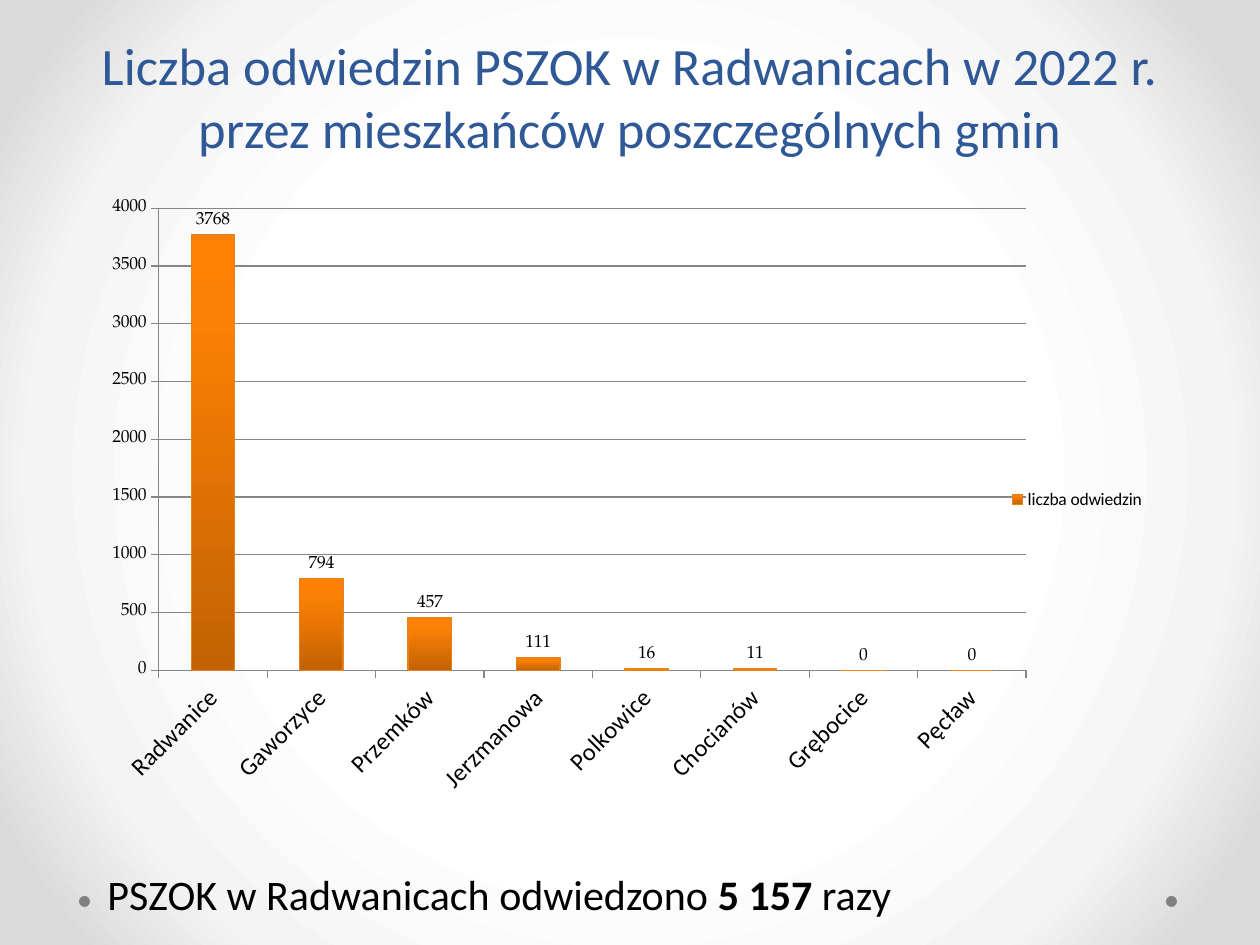
from pptx import Presentation
from pptx.chart.data import CategoryChartData
from pptx.dml.color import RGBColor
from pptx.enum.chart import (XL_CHART_TYPE, XL_LABEL_POSITION,
                             XL_LEGEND_POSITION, XL_TICK_MARK)
from pptx.enum.shapes import MSO_SHAPE
from pptx.enum.text import MSO_ANCHOR, MSO_AUTO_SIZE, PP_ALIGN
from pptx.oxml import parse_xml
from pptx.oxml.ns import nsdecls
from pptx.util import Emu, Pt

SCALE = 914400 / 126
COLORS = {
    "title": "2F5897", "text": "000000", "dot": "808080", "grid": "868686",
    "edge": "E6811C", "low": "C26203", "mid": "FB8004", "top": "FF8002",
    "white": "FFFFFF", "pale": "F4F4F4", "gray": "DADADA",
}
SANS, SERIF = "Calibri", "TeX Gyre Pagella"
VISITS = {
    "Radwanice": 3768, "Gaworzyce": 794, "Przemków": 457, "Jerzmanowa": 111,
    "Polkowice": 16, "Chocianów": 11, "Grębocice": 0, "Pęcław": 0,
}


def px(num):
    return Emu(round(num * SCALE))


def rgb(name):
    return RGBColor.from_string(COLORS[name])


def style(font, face, size, color="text", bold=False):
    font.name, font.size, font.bold = face, Pt(size), bold
    font.color.rgb = rgb(color)


def add_text(slide, box, lines, size, color="text", align=PP_ALIGN.LEFT,
             anchor=MSO_ANCHOR.TOP, fit=MSO_AUTO_SIZE.NONE):
    """Each line is a list of (text, bold) runs."""
    frame = slide.shapes.add_textbox(*map(px, box)).text_frame
    frame.word_wrap, frame.auto_size = True, fit
    frame.vertical_anchor = anchor
    para = frame.paragraphs[0]
    para.alignment = align
    for row, runs in enumerate(lines):
        if row:
            para.add_line_break()
        for text, bold in runs:
            run = para.add_run()
            run.text = text
            style(run.font, SANS, size, color, bold)


def set_grad(fill, root, stops, shade):
    """Fill with a gradient of (percent, color) stops and a shade tag."""
    fill.gradient()
    old = root.xpath(".//a:gradFill")[0]
    marks = "".join(
        f'<a:gs pos="{pos * 1000}"><a:srgbClr val="{COLORS[name]}"/></a:gs>'
        for pos, name in stops)
    new = parse_xml(f'<a:gradFill {nsdecls("a")} rotWithShape="1">'
                    f'<a:gsLst>{marks}</a:gsLst>{shade}</a:gradFill>')
    old.getparent().replace(old, new)


def add_dot(slide, left, top, size):
    dot = slide.shapes.add_shape(
        MSO_SHAPE.OVAL, px(left), px(top), px(size), px(size))
    dot.shadow.inherit = False
    dot.fill.solid()
    dot.fill.fore_color.rgb = rgb("dot")
    dot.line.fill.background()


def set_plot(chart, left, top, width, height):
    """Place the inner plot area, in fractions of the chart."""
    area = chart.element.xpath(".//c:plotArea")[0]
    for old in area.xpath("./c:layout"):
        area.remove(old)
    sizes = "".join(f'<c:{key} val="{val}"/>' for key, val in
                    zip("xywh", (left, top, width, height)))
    area.insert(0, parse_xml(
        f'<c:layout {nsdecls("c")}><c:manualLayout>'
        '<c:layoutTarget val="inner"/><c:xMode val="edge"/>'
        f'<c:yMode val="edge"/>{sizes}</c:manualLayout></c:layout>'))


def set_line(line, color):
    line.color.rgb = rgb(color)
    line.width = Pt(0.75)


def add_chart(slide, box):
    data = CategoryChartData()
    data.categories = list(VISITS)
    data.add_series("liczba odwiedzin", list(VISITS.values()))
    chart = slide.shapes.add_chart(
        XL_CHART_TYPE.COLUMN_CLUSTERED, *map(px, box), data).chart
    style(chart.font, SERIF, 10)
    chart.has_title = False
    set_plot(chart, 0.06, 0.037, 0.816, 0.735)

    # Legend
    chart.has_legend = True
    chart.legend.position = XL_LEGEND_POSITION.RIGHT
    chart.legend.include_in_layout = False
    style(chart.legend.font, SANS, 10)

    # Axes
    cats, vals = chart.category_axis, chart.value_axis
    for axis, face, size in ((cats, SANS, 14), (vals, SERIF, 10)):
        axis.major_tick_mark = XL_TICK_MARK.OUTSIDE
        axis.minor_tick_mark = XL_TICK_MARK.NONE
        set_line(axis.format.line, "grid")
        style(axis.tick_labels.font, face, size)
    chart.element.xpath(".//c:catAx/c:txPr/a:bodyPr")[0].set("rot", "-2700000")
    vals.minimum_scale, vals.maximum_scale, vals.major_unit = 0, 4000, 500
    vals.has_major_gridlines = True
    set_line(vals.major_gridlines.format.line, "grid")

    # Columns and their labels
    plot = chart.plots[0]
    plot.gap_width, plot.vary_by_categories = 150, False
    bars = plot.series[0]
    set_grad(bars.format.fill, chart.element,
             [(0, "low"), (80, "mid"), (100, "top")],
             '<a:lin ang="16200000" scaled="0"/>')
    set_line(bars.format.line, "edge")
    plot.has_data_labels = True
    tags = plot.data_labels
    tags.show_value = True
    tags.position = XL_LABEL_POSITION.OUTSIDE_END
    style(tags.font, SERIF, 10)


def main():
    deck = Presentation()
    deck.slide_width, deck.slide_height = px(1260), px(945)
    slide = deck.slides.add_slide(deck.slide_layouts[6])

    # Background
    set_grad(slide.background.fill, slide.element,
             [(50, "white"), (76, "pale"), (92, "gray")],
             '<a:path path="circle"><a:fillToRect l="50000" t="50000" '
             'r="50000" b="50000"/></a:path>')
    for left in (1166, 79):
        add_dot(slide, left, 896, 11)

    # Content
    add_chart(slide, (95, 185, 1063, 629))
    add_text(slide, (95, 862, 965, 63),
             [[("PSZOK w Radwanicach odwiedzono ", False), ("5 157 ", True),
               ("razy", False)]],
             24, fit=MSO_AUTO_SIZE.SHAPE_TO_FIT_TEXT)
    add_text(slide, (63, 0, 1134, 165),
             [[("Liczba odwiedzin PSZOK w Radwanicach w 2022 r.", False)],
              [("przez mieszkańców poszczególnych gmin", False)]],
             30, color="title", align=PP_ALIGN.CENTER,
             anchor=MSO_ANCHOR.BOTTOM)
    deck.save("out.pptx")


if __name__ == "__main__":
    main()
